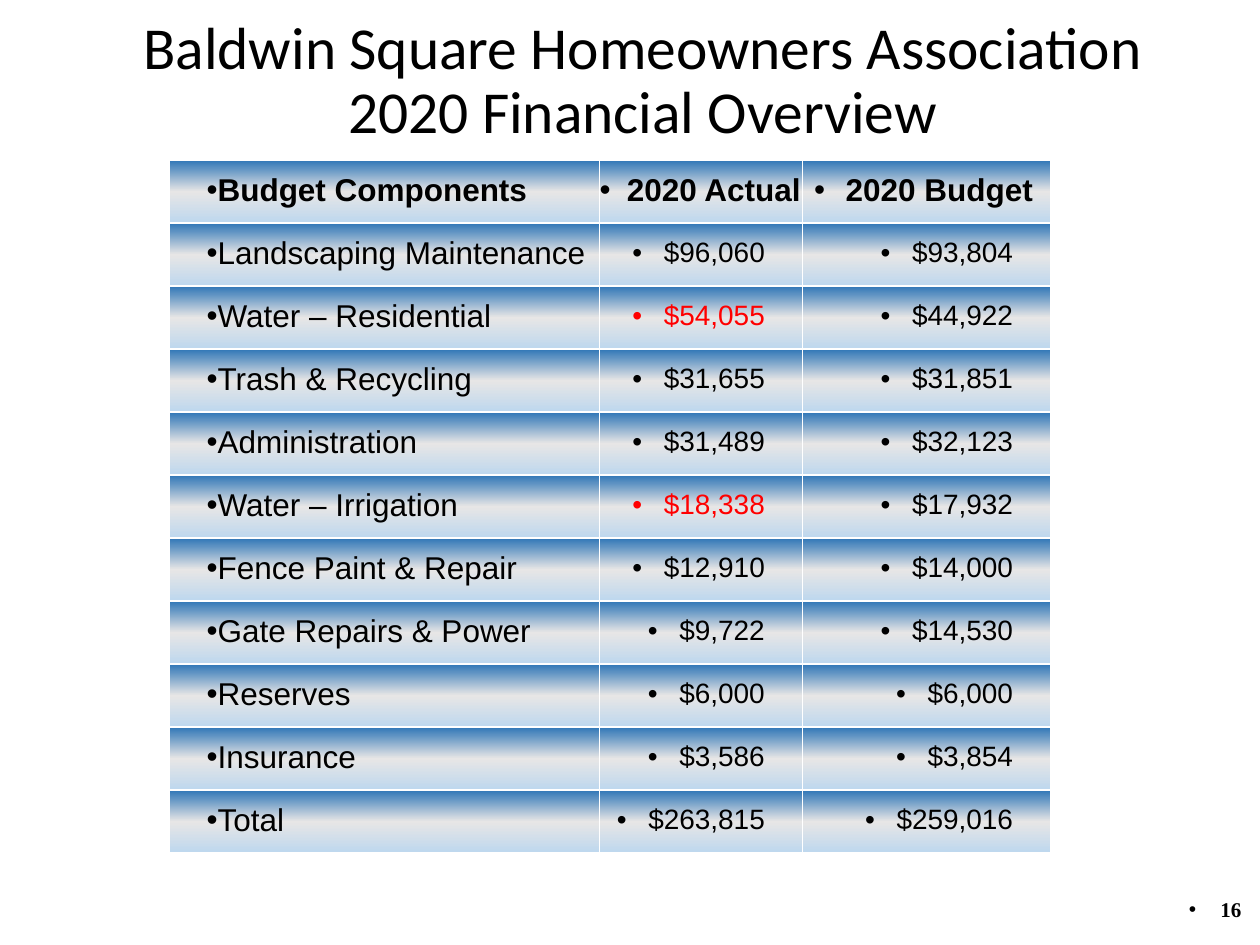
from lxml.etree import SubElement
from pptx import Presentation
from pptx.dml.color import RGBColor
from pptx.enum.text import MSO_ANCHOR, PP_ALIGN
from pptx.oxml.ns import qn
from pptx.util import Inches, Pt

BLACK = RGBColor(0x00, 0x00, 0x00)
RED = RGBColor(0xFF, 0x00, 0x00)
WHITE = RGBColor(0xFF, 0xFF, 0xFF)
BLUE = RGBColor(0x2E, 0x75, 0xB6)
GRAY = RGBColor(0xE7, 0xE6, 0xE6)
PALE_BLUE = RGBColor(0xBD, 0xD7, 0xEE)

HEADER = ("Budget Components", "2020 Actual", "2020 Budget")
BUDGET = [
    ("Landscaping Maintenance", "$96,060", "$93,804"),
    ("Water – Residential", "$54,055", "$44,922"),
    ("Trash & Recycling", "$31,655", "$31,851"),
    ("Administration", "$31,489", "$32,123"),
    ("Water – Irrigation", "$18,338", "$17,932"),
    ("Fence Paint & Repair", "$12,910", "$14,000"),
    ("Gate Repairs & Power", "$9,722", "$14,530"),
    ("Reserves", "$6,000", "$6,000"),
    ("Insurance", "$3,586", "$3,854"),
    ("Total", "$263,815", "$259,016"),
]
OVERSPENT = {"$54,055", "$18,338"}


class SlideBuilder:
    title_font = {"name": "Calibri", "size": Pt(34)}
    number_font = {"name": "Times New Roman", "size": Pt(12), "bold": True}
    header_font = {"name": "Arial", "size": Pt(18), "bold": True}
    label_font = {"name": "Arial", "size": Pt(18), "bold": False}
    amount_font = {"name": "Arial", "size": Pt(16), "bold": False}
    gradient = ((0, BLUE), (50, GRAY), (100, PALE_BLUE))
    line_spacing = 0.9
    # Bullet layouts: left margin and first-line indent
    tight = (0, 0)
    hanging = (0.25, -0.25)
    centered = (0.2, -0.25)

    def __init__(self, slide):
        self.slide = slide

    def paragraph(self, p, text, font, align, color=BLACK, bullet=None):
        p.alignment = align
        if bullet:
            pPr = p._p.get_or_add_pPr()
            for key, value in zip(("marL", "indent"), bullet):
                pPr.set(key, str(Inches(value)))
            SubElement(pPr, qn("a:buFont")).set("typeface", "Arial")
            SubElement(pPr, qn("a:buChar")).set("char", "•")
        r = p.add_run()
        r.text = text
        for key, value in font.items():
            setattr(r.font, key, value)
        r.font.color.rgb = color

    def text(self, box, lines, font, align, spacing=None, bullet=None):
        sp = self.slide.shapes.add_textbox(*map(Inches, box))
        tf = sp.text_frame
        tf.word_wrap = True
        tf.vertical_anchor = MSO_ANCHOR.MIDDLE
        for i, line in enumerate(lines):
            p = tf.add_paragraph() if i else tf.paragraphs[0]
            self.paragraph(p, line, font, align, bullet=bullet)
            p.line_spacing = spacing

    def cell_style(self, cell):
        tcPr = cell._tc.get_or_add_tcPr()
        # White borders on all four sides
        for side in ("lnL", "lnR", "lnT", "lnB"):
            ln = SubElement(tcPr, qn(f"a:{side}"), w=str(Pt(1)))
            fill = SubElement(ln, qn("a:solidFill"))
            SubElement(fill, qn("a:srgbClr"), val=str(WHITE))
        # Three-stop gradient from top to bottom
        grad = SubElement(tcPr, qn("a:gradFill"), rotWithShape="1")
        stops = SubElement(grad, qn("a:gsLst"))
        for percent, color in self.gradient:
            gs = SubElement(stops, qn("a:gs"), pos=str(percent * 1000))
            SubElement(gs, qn("a:srgbClr"), val=str(color))
        SubElement(grad, qn("a:lin"), ang=str(90 * 60000), scaled="0")

    def cell(self, cell, text, font, align, bullet, left=0, right=0, color=BLACK):
        margins = {"margin_left": left, "margin_right": right,
                   "margin_top": 0, "margin_bottom": 0}
        for key, value in margins.items():
            setattr(cell, key, Inches(value))
        cell.vertical_anchor = MSO_ANCHOR.MIDDLE
        self.cell_style(cell)
        p = cell.text_frame.paragraphs[0]
        p.line_spacing = self.line_spacing
        self.paragraph(p, text, font, align, color, bullet)

    def table(self, left, top, widths, row_height, header, rows):
        n = len(rows) + 1
        frame = self.slide.shapes.add_table(
            n, len(widths), Inches(left), Inches(top),
            Inches(sum(widths)), Inches(row_height * n))
        tbl = frame.table
        tbl.first_row = tbl.horz_banding = False
        for column, width in zip(tbl.columns, widths):
            column.width = Inches(width)
        for i, row in enumerate([header, *rows]):
            tbl.rows[i].height = Inches(row_height)
            for j, text in enumerate(row):
                cell = tbl.cell(i, j)
                if j == 0:
                    font = self.label_font if i else self.header_font
                    self.cell(cell, text, font, PP_ALIGN.LEFT, self.tight, left=0.3)
                elif i == 0:
                    self.cell(cell, text, self.header_font, PP_ALIGN.CENTER,
                              self.centered)
                else:
                    color = RED if text in OVERSPENT else BLACK
                    self.cell(cell, text, self.amount_font, PP_ALIGN.RIGHT,
                              self.hanging, right=0.3, color=color)


def main():
    prs = Presentation()
    prs.slide_width, prs.slide_height = Inches(10), Inches(7.5)
    s = SlideBuilder(prs.slides.add_slide(prs.slide_layouts[6]))

    # Title
    s.text((0.25, 0.25, 9.7, 0.8),
           ["Baldwin Square Homeowners Association", "2020 Financial Overview"],
           s.title_font, PP_ALIGN.CENTER, s.line_spacing)

    # Slide number
    s.text((9.29, 6.97, 0.66, 0.49), ["16"], s.number_font, PP_ALIGN.RIGHT,
           bullet=s.hanging)

    # Budget table
    s.table(1.34, 1.27, (3.42, 1.61, 1.97), 0.5, HEADER, BUDGET)

    prs.save("out.pptx")


if __name__ == "__main__":
    main()
